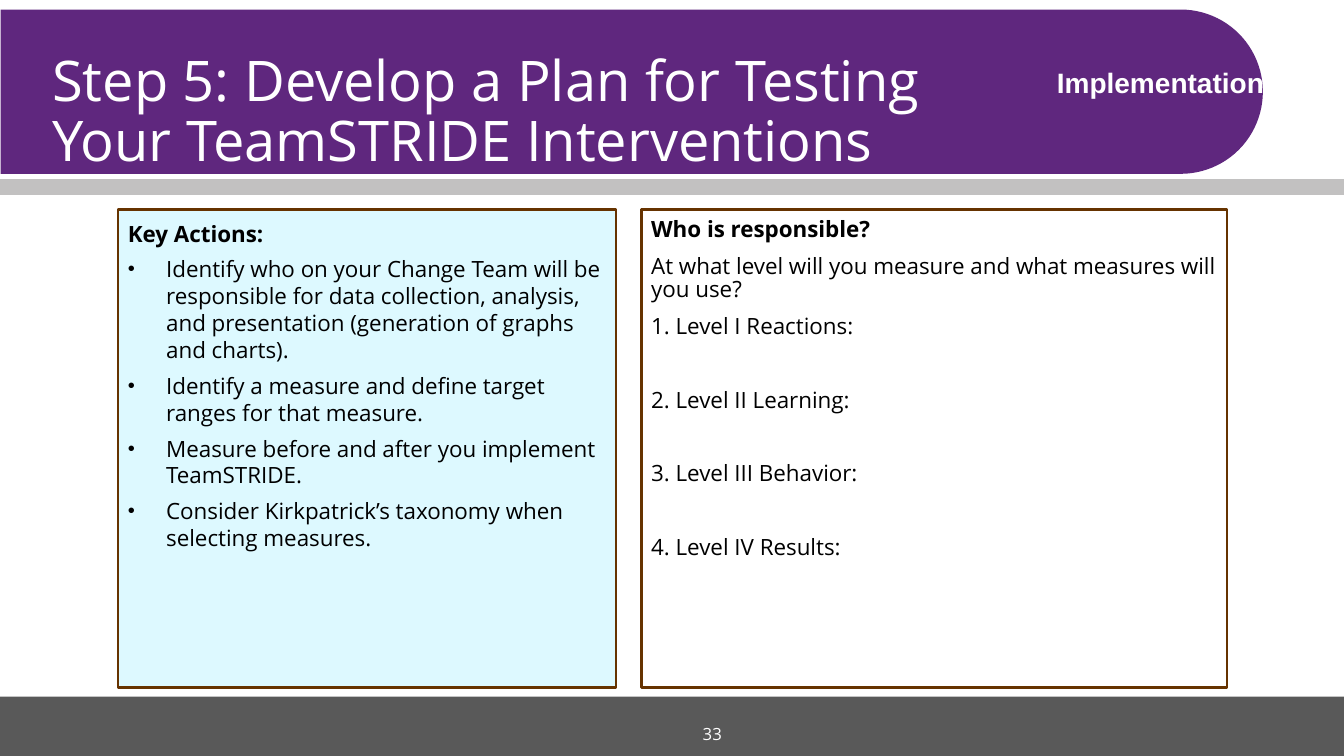
from lxml import etree
from pptx import Presentation
from pptx.dml.color import RGBColor
from pptx.enum.shapes import MSO_SHAPE
from pptx.enum.text import MSO_ANCHOR, PP_ALIGN
from pptx.oxml.ns import qn
from pptx.util import Inches, Pt

RECT, ROUND = MSO_SHAPE.RECTANGLE, MSO_SHAPE.ROUND_2_SAME_RECTANGLE
TOP, MIDDLE = MSO_ANCHOR.TOP, MSO_ANCHOR.MIDDLE
LEFT, CENTER = PP_ALIGN.LEFT, PP_ALIGN.CENTER

TITLE = "Step 5: Develop a Plan for Testing Your TeamSTRIDE Interventions"
SECTION = "Implementation"
PAGE_NUMBER = "33"
ACTIONS_HEADING = "Key Actions:"
ACTIONS = [
    "Identify who on your Change Team will be responsible for data collection, analysis, "
    "and presentation (generation of graphs and charts).",
    "Identify a measure and define target ranges for that measure.",
    "Measure before and after you implement TeamSTRIDE.",
    "Consider Kirkpatrick’s taxonomy when selecting measures.",
]
OWNER_HEADING = "Who is responsible?"
OWNER_QUESTION = "At what level will you measure and what measures will you use?"
LEVELS = ["Level I Reactions:", "Level II Learning:", "Level III Behavior:", "Level IV Results:"]

THEME = {
    "purple": "5F277E", "silver": "C2C1C1", "gray": "595959", "white": "FFFFFF",
    "black": "000000", "pale": "DDF9FF", "brown": "663300",
    "font": "Open Sans", "label_font": "Arial",
    "title": 40, "label": 20, "body": 16, "number": 12,
}
PANEL_TOP, PANEL_HEIGHT = 2.08, 4.74
PANEL_INSET = 0.1
LEVEL_GAP = 36.4


def color(name):
    return RGBColor.from_string(THEME[name])


def add_block(page, kind, place, fill=None, line=None, weight=1):
    block = page.shapes.add_shape(kind, *map(Inches, place))
    block.shadow.inherit = False
    if fill:
        block.fill.solid()
        block.fill.fore_color.rgb = color(fill)
    else:
        block.fill.background()
    if line:
        block.line.color.rgb = color(line)
        block.line.width = Pt(weight)
    else:
        block.line.fill.background()
    return block


def add_bullet(props):
    tint = etree.SubElement(props, qn("a:buClr"))
    etree.SubElement(tint, qn("a:srgbClr"), val=THEME["black"])
    etree.SubElement(props, qn("a:buSzPct"), val="90000")
    etree.SubElement(props, qn("a:buFont"), typeface="Arial")
    etree.SubElement(props, qn("a:buChar"), char="•")


def write(box, paras, size="body", tint="black", font="font", align=LEFT, anchor=TOP, inset=None):
    frame = box.text_frame
    frame.word_wrap = True
    frame.vertical_anchor = anchor
    if inset is not None:
        for side in ("left", "top", "right", "bottom"):
            setattr(frame, f"margin_{side}", Inches(inset))
    for index, (text, look) in enumerate(paras):
        para = frame.add_paragraph() if index else frame.paragraphs[0]
        formats = {"alignment": align, "line_spacing": look.get("spacing", 1.0),
                   "space_before": Pt(look.get("before", 0))}
        for name, value in formats.items():
            setattr(para, name, value)
        props = para._p.get_or_add_pPr()
        if "hang" in look:
            props.set("marL", str(Inches(look["hang"])))
            props.set("indent", str(-Inches(look["hang"])))
        if look.get("bullet"):
            add_bullet(props)
        span = para.add_run()
        span.text = text
        letters = {"name": THEME[font], "size": Pt(THEME[size]), "bold": look.get("bold", False)}
        for name, value in letters.items():
            setattr(span.font, name, value)
        span.font.color.rgb = color(tint)


def add_text(page, place, text, look, **style):
    box = page.shapes.add_textbox(*map(Inches, place))
    write(box, [(text, look)], tint="white", **style)


def add_panel(page, left, width, fill, paras):
    place = (left, PANEL_TOP, width, PANEL_HEIGHT)
    panel = add_block(page, RECT, place, fill, "brown", 2)
    write(panel, paras, inset=PANEL_INSET)


def main():
    deck = Presentation()
    deck.slide_width, deck.slide_height = Inches(13.33), Inches(7.5)
    page = deck.slides.add_slide(deck.slide_layouts[6])

    banner = add_block(page, ROUND, (5.45, -5.35, 1.63, 12.52), "purple")
    banner.adjustments[0], banner.adjustments[1] = 0.5, 0
    banner.rotation = 90
    add_block(page, RECT, (0, 1.78, 13.33, 0.15), "silver", "silver")
    add_block(page, RECT, (0, 6.91, 13.33, 0.59), "gray")

    add_text(page, (0.42, 0.4, 9.92, 1.45), TITLE, {"spacing": 0.9}, size="title", anchor=MIDDLE)
    add_text(page, (10.34, 0.6, 2.34, 0.44), SECTION, {"bold": True},
             size="label", font="label_font", align=CENTER)

    action = {"hang": 0.38, "before": 6.4, "bullet": True}
    add_panel(page, 1.17, 4.94, "pale",
              [(ACTIONS_HEADING, {"bold": True})] + [(text, action) for text in ACTIONS])

    tight = {"spacing": 0.85}
    owner = [(OWNER_HEADING, {**tight, "bold": True}), (OWNER_QUESTION, {**tight, "before": 10})]
    for number, level in enumerate(LEVELS, 1):
        gap = 10 if number == 1 else LEVEL_GAP
        owner.append((f"{number}. {level}", {**tight, "hang": 0.25, "before": gap}))
    add_panel(page, 6.36, 5.81, None, owner)

    add_text(page, (6.1, 7.08, 1.93, 0.4), PAGE_NUMBER, {},
             size="number", align=CENTER, anchor=MIDDLE)
    deck.save("out.pptx")


if __name__ == "__main__":
    main()
